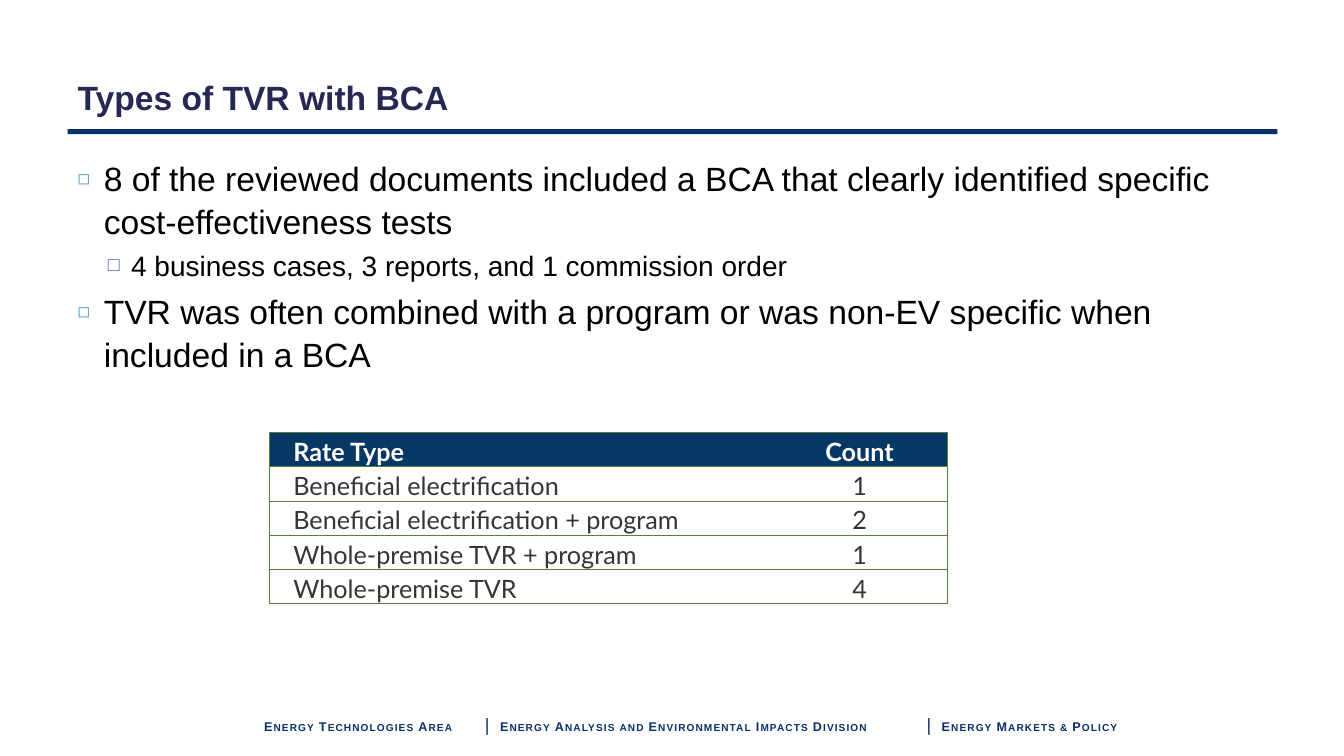
"""Build the slide on types of TVR with BCA."""
from dataclasses import dataclass

from lxml import etree
from pptx import Presentation
from pptx.dml.color import RGBColor
from pptx.enum.shapes import MSO_SHAPE
from pptx.enum.text import MSO_ANCHOR, MSO_AUTO_SIZE, PP_ALIGN
from pptx.oxml.ns import qn
from pptx.util import Inches, Pt

RECT = MSO_SHAPE.RECTANGLE
TOP, BOTTOM = MSO_ANCHOR.TOP, MSO_ANCHOR.BOTTOM
LEFT, CENTER = PP_ALIGN.LEFT, PP_ALIGN.CENTER
NO_FIT = MSO_AUTO_SIZE.NONE

NAVY = RGBColor(0x08, 0x30, 0x6A)
INK = RGBColor(0x24, 0x28, 0x52)
BLACK = RGBColor(0, 0, 0)
WHITE = RGBColor(255, 255, 255)
SKY = RGBColor(0x62, 0x9D, 0xD1)
BLUE = RGBColor(0x4A, 0x66, 0xAC)
HEAD = RGBColor(0x07, 0x37, 0x63)
GRAY = RGBColor(0x35, 0x35, 0x37)
GREEN = RGBColor(0x58, 0x7E, 0x39)


@dataclass
class Level:
    """Hold the look of one list level."""
    size: float
    left: float
    hang: float
    space: float
    mark: str
    color: RGBColor
    scale: int


@dataclass
class Item:
    """Hold one list entry."""
    text: str
    level: int = 0


LEVELS = [
    Level(24, 0.26, 0.26, 5.2, "◻", SKY, 60),
    Level(20, 0.53, 0.23, 4.1, "□", BLUE, 70),
]
ITEMS = [
    Item("8 of the reviewed documents included a BCA that clearly identified "
         "specific cost-effectiveness tests"),
    Item("4 business cases, 3 reports, and 1 commission order", 1),
    Item("TVR was often combined with a program or was non-EV specific when "
         "included in a BCA"),
]
ROWS = [
    ("Rate Type", "Count"),
    ("Beneficial electrification", "1"),
    ("Beneficial electrification + program", "2"),
    ("Whole-premise TVR + program", "1"),
    ("Whole-premise TVR", "4"),
]
WIDTHS = [4.98, 1.75]
ROW_H = 0.34
UNITS = [
    "Energy Technologies Area",
    "Energy Analysis and Environmental Impacts Division",
    "Energy Markets & Policy",
]
STOPS = [2.19, 2.34, 6.57, 6.72]


def add_run(para, text: str, size: float, color: RGBColor,
            bold: bool = False, face: str = "Arial"):
    """Add one styled run."""
    run = para.add_run()
    run.text = text
    font = run.font
    font.name, font.size, font.bold = face, Pt(size), bold
    font.color.rgb = color
    return run


def place(shape, left: float, top: float, width: float, height: float) -> None:
    """Move and size a shape."""
    shape.left, shape.top = Inches(left), Inches(top)
    shape.width, shape.height = Inches(width), Inches(height)


def add_bar(slide) -> None:
    """Draw the rule under the title."""
    bar = slide.shapes.add_shape(
        RECT, Inches(0.67), Inches(1.28), Inches(12), Inches(0.05))
    bar.shadow.inherit = False
    bar.fill.solid()
    bar.fill.fore_color.rgb = NAVY
    bar.line.fill.background()


def add_foot(slide) -> None:
    """Write the footer with its units set on tab stops."""
    box = slide.shapes.add_textbox(
        Inches(2.14), Inches(6.99), Inches(9.67), Inches(0.48))
    frame = box.text_frame
    frame.word_wrap = True
    frame.margin_left = Inches(0.48)
    para = frame.paragraphs[0]
    tabs = etree.SubElement(para._p.get_or_add_pPr(), qn("a:tabLst"))
    for stop in STOPS:
        etree.SubElement(tabs, qn("a:tab"), pos=str(Inches(stop)), algn="l")
    for i, unit in enumerate(UNITS):
        parts = [(unit, 9, True)]
        if i:
            parts = [("\t", 9, True), ("|", 16, False), ("\t" + unit, 9, True)]
        for text, size, bold in parts:
            run = add_run(para, text, size, NAVY, bold)
            props = run._r.get_or_add_rPr()
            props.set("cap", "small")
            props.set("spc", "80")


def fill_title(slide) -> None:
    """Write the title."""
    title = slide.shapes.title
    place(title, 0.67, 0.71, 12, 0.5)
    frame = title.text_frame
    frame.auto_size = NO_FIT
    frame.vertical_anchor = BOTTOM
    para = frame.paragraphs[0]
    para.alignment = LEFT
    add_run(para, "Types of TVR with BCA", 24, INK, True)


def add_mark(para, level: Level) -> None:
    """Set the indent and bullet of a paragraph."""
    props = para._p.get_or_add_pPr()
    props.set("marL", str(Inches(level.left)))
    props.set("indent", str(-Inches(level.hang)))
    tint = etree.SubElement(props, qn("a:buClr"))
    etree.SubElement(tint, qn("a:srgbClr"), val=str(level.color))
    etree.SubElement(props, qn("a:buSzPct"), val=str(level.scale * 1000))
    etree.SubElement(props, qn("a:buFont"), typeface="Arial")
    etree.SubElement(props, qn("a:buChar"), char=level.mark)


def fill_body(slide) -> None:
    """Write the bullet list."""
    body = slide.placeholders[1]
    place(body, 0.67, 1.5, 12, 5.25)
    frame = body.text_frame
    frame.auto_size = NO_FIT
    frame.vertical_anchor = TOP
    for i, item in enumerate(ITEMS):
        para = frame.add_paragraph() if i else frame.paragraphs[0]
        level = LEVELS[item.level]
        para.level = item.level
        add_mark(para, level)
        para.line_spacing = 1.05
        para.space_before = Pt(level.space if i else 0)
        add_run(para, item.text, level.size, BLACK)


def add_edges(cell, sides: str) -> None:
    """Draw the named cell borders and clear the others."""
    props = cell._tc.get_or_add_tcPr()
    for side in "LRTB":
        line = etree.SubElement(props, qn("a:ln" + side), w=str(Pt(0.5)))
        if side in sides:
            fill = etree.SubElement(line, qn("a:solidFill"))
            etree.SubElement(fill, qn("a:srgbClr"), val=str(GREEN))
        else:
            etree.SubElement(line, qn("a:noFill"))


def add_rates(slide) -> None:
    """Build the table of rate types."""
    table = slide.shapes.add_table(
        len(ROWS), len(WIDTHS), Inches(2.67), Inches(4.29),
        Inches(sum(WIDTHS)), Inches(ROW_H * len(ROWS))).table
    table.horz_banding = False
    for col, width in zip(table.columns, WIDTHS):
        col.width = Inches(width)
    for r, row in enumerate(ROWS):
        table.rows[r].height = Inches(ROW_H)
        for c, text in enumerate(row):
            cell = table.cell(r, c)
            add_edges(cell, "RTB" if c else "LTB")
            cell.fill.background()
            if r == 0:
                cell.fill.solid()
                cell.fill.fore_color.rgb = HEAD
            cell.vertical_anchor = BOTTOM
            cell.margin_left = Inches(0.01 if c else 0.24)
            cell.margin_right = cell.margin_top = Inches(0.01)
            cell.margin_bottom = 0
            para = cell.text_frame.paragraphs[0]
            para.alignment = CENTER if c else LEFT
            add_run(para, text, 18, GRAY if r else WHITE, r == 0, "Lato")


def main() -> None:
    """Build and save the deck."""
    deck = Presentation()
    deck.slide_width, deck.slide_height = Inches(13.33), Inches(7.5)
    slide = deck.slides.add_slide(deck.slide_layouts[1])
    for draw in (add_bar, add_foot, fill_title, fill_body, add_rates):
        draw(slide)
    deck.save("out.pptx")


if __name__ == "__main__":
    main()
